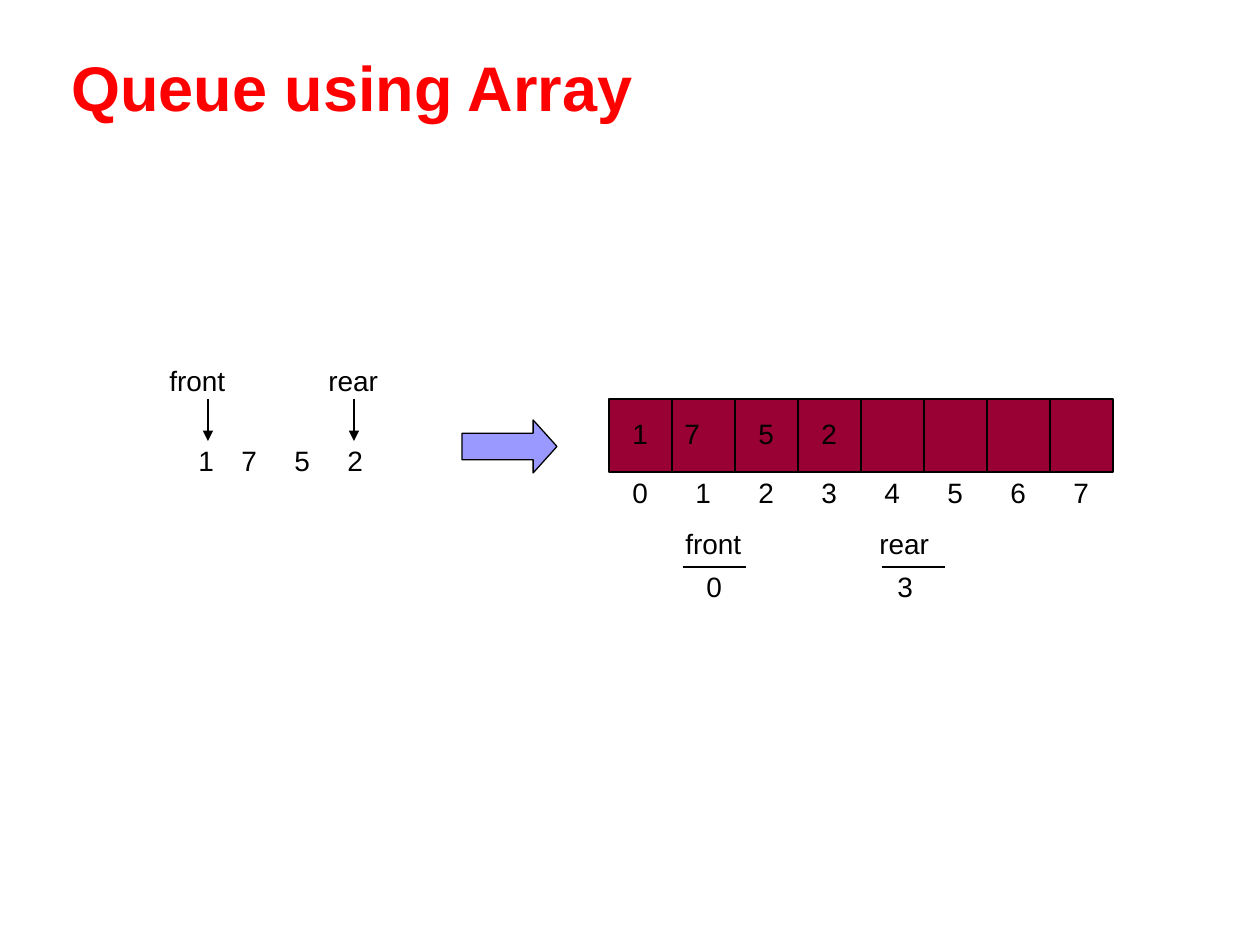
from pptx import Presentation
from pptx.dml.color import RGBColor
from pptx.enum.shapes import MSO_CONNECTOR as Connector, MSO_SHAPE as Shape
from pptx.enum.text import MSO_ANCHOR as Anchor, MSO_AUTO_SIZE as AutoSize, PP_ALIGN as Align
from pptx.oxml.ns import qn
from pptx.util import Emu, Pt
from lxml.etree import SubElement

BLACK = "000000"
ARRAY_LEFT, ARRAY_TOP, CELL_WIDTH, CELL_HEIGHT, CELL_COUNT = 609, 399, 63, 73, 8
LABEL_HEIGHT, DIGIT_WIDTH = 47, 40


def px(length):
    """Turn px, 126 to the inch, into EMU."""
    return Emu(round(length * 914400 / 126))


def color(value):
    """Turn a hex string into a colour."""
    return RGBColor.from_string(value)


def style_text(frame, text, size, ink, bold=False):
    """Write one left-aligned Arial paragraph into a text frame."""
    frame.text = text
    para = frame.paragraphs[0]
    para.alignment = Align.LEFT
    para.font.name = "Arial"
    para.font.size = Pt(size)
    para.font.bold = bold
    para.font.color.rgb = color(ink)


def add_title(page, text):
    """Fill and place the title placeholder."""
    title = page.shapes.title
    title.left, title.top, title.width, title.height = px(59), px(4), px(1134), px(126)
    title.text_frame.auto_size = AutoSize.NONE
    title.text_frame.vertical_anchor = Anchor.BOTTOM
    style_text(title.text_frame, text, 36, "FF0000", bold=True)


def add_label(page, text, left, top, width=DIGIT_WIDTH, wrap=False):
    """Add a short black label."""
    box = page.shapes.add_textbox(px(left), px(top), px(width), px(LABEL_HEIGHT))
    box.text_frame.word_wrap = wrap
    box.text_frame.auto_size = AutoSize.SHAPE_TO_FIT_TEXT
    style_text(box.text_frame, text, 16, BLACK)


def add_block(page, kind, left, top, width, height, fill):
    """Add a filled shape with a thin black outline."""
    block = page.shapes.add_shape(kind, px(left), px(top), px(width), px(height))
    block.shadow.inherit = False
    block.fill.solid()
    block.fill.fore_color.rgb = color(fill)
    block.line.color.rgb = color(BLACK)
    block.line.width = Pt(0.75)
    return block


def add_line(page, x1, y1, x2, y2, arrow=False):
    """Add a thin black line, with an arrowhead at its end if asked."""
    line = page.shapes.add_connector(Connector.STRAIGHT, px(x1), px(y1), px(x2), px(y2))
    line.line.color.rgb = color(BLACK)
    line.line.width = Pt(0.75)
    if arrow:
        SubElement(line.line._get_or_add_ln(), qn("a:tailEnd"), type="triangle")
    SubElement(line._element.spPr, qn("a:effectLst"))


def add_queue(page):
    """Draw the queued numbers with their front and rear pointers."""
    for digit, left in zip("1752", (186, 229, 282, 335)):
        add_label(page, digit, left, 437)
    for name, left, width, x in (("front", 157, 82, 208), ("rear", 316, 76, 354)):
        add_label(page, name, left, 357, width)
        add_line(page, x, ARRAY_TOP, x, 441, arrow=True)


def add_array(page):
    """Draw the array with its cells, indexes and values."""
    add_block(page, Shape.RECTANGLE, ARRAY_LEFT, ARRAY_TOP,
              CELL_COUNT * CELL_WIDTH, CELL_HEIGHT, "990033")
    for index in range(CELL_COUNT):
        x = ARRAY_LEFT + index * CELL_WIDTH
        if index:
            add_line(page, x, ARRAY_TOP, x, ARRAY_TOP + CELL_HEIGHT)
        add_label(page, str(index), x + 11, 469)
    for digit, left, width in (("1", 620, 34), ("7", 672, 53), ("5", 746, 34), ("2", 809, 39)):
        add_label(page, digit, left, 410, width, wrap=True)


def add_variable(page, name, value, name_left, name_width, line_left, value_left):
    """Draw a variable name above a rule and its value below."""
    add_label(page, name, name_left, 520, name_width, wrap=name_width > 82)
    add_line(page, line_left, 567, line_left + CELL_WIDTH, 567)
    add_label(page, value, value_left, 563)


def main():
    """Build and save the slide."""
    deck = Presentation()
    deck.slide_width, deck.slide_height = px(1260), px(945)
    page = deck.slides.add_slide(deck.slide_layouts[5])
    add_title(page, "Queue using Array")
    add_queue(page)
    arrow = add_block(page, Shape.RIGHT_ARROW, 462, 420, 95, 53, "9999FF")
    arrow.adjustments[1] = 0.45
    add_array(page)
    add_variable(page, "front", "0", 673, 82, 683, 694)
    add_variable(page, "rear", "3", 867, 88, 882, 885)
    deck.save("out.pptx")


if __name__ == "__main__":
    main()
